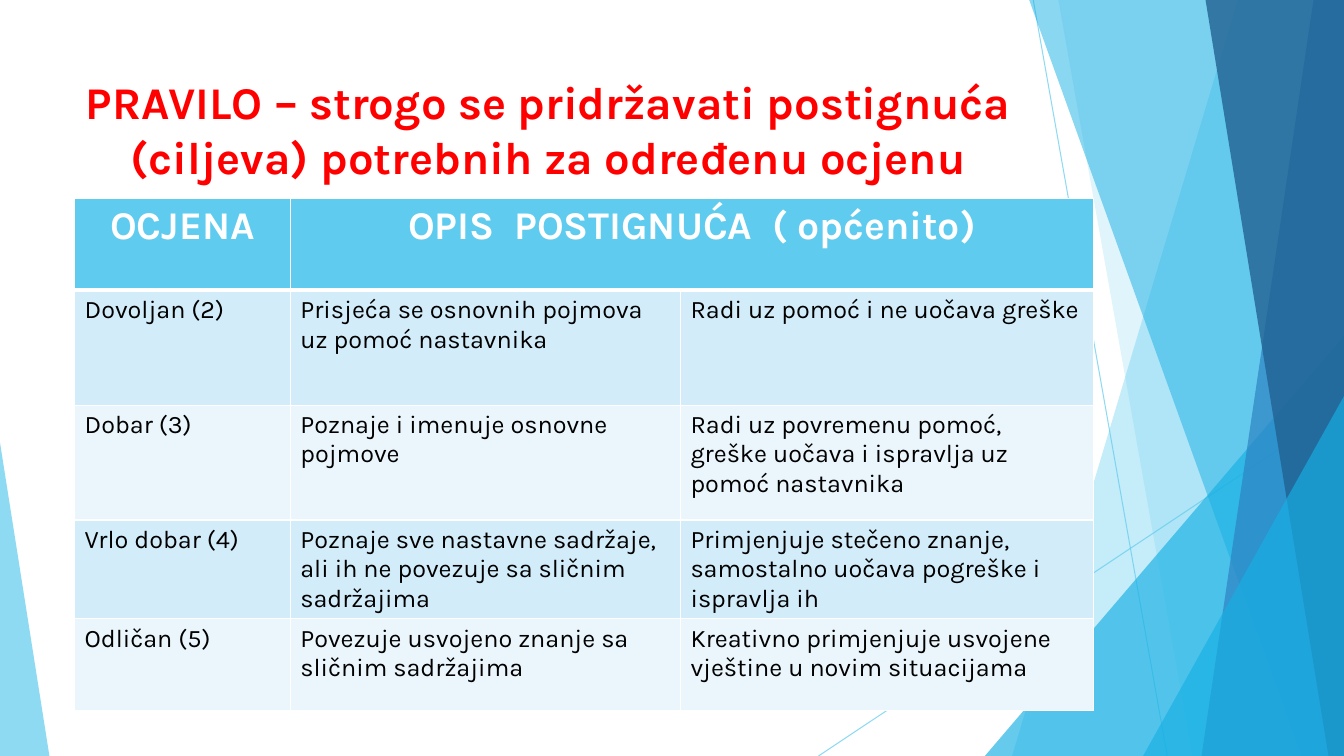
from pptx import Presentation
from pptx.dml.color import RGBColor
from pptx.enum.shapes import MSO_CONNECTOR as CONN, MSO_SHAPE as SHAPE
from pptx.enum.text import MSO_ANCHOR as ANCHOR, MSO_AUTO_SIZE as AUTO, PP_ALIGN as ALIGN
from pptx.oxml.ns import qn
from pptx.oxml.xmlchemy import OxmlElement
from pptx.util import Inches, Pt

SKY, CYAN, BLUE, NAVY = "5FCBEF", "17B0E4", "2E83C3", "226292"
RED, WHITE, BLACK = "FF0000", "FFFFFF", "000000"
BANDS = ["D2ECF9", "EAF6FC"]

COLS = [16.05, 29.03, 30.75]
ROWS = [12.13, 15.2, 15.2, 12.13, 12.13]
HEADER = ["OCJENA", "OPIS  POSTIGNUĆA  ( općenito)"]
GRADES = [
    ["Dovoljan (2)", "Prisjeća se osnovnih pojmova uz pomoć nastavnika",
     "Radi uz pomoć i ne uočava greške"],
    ["Dobar (3)", "Poznaje i imenuje osnovne pojmove",
     "Radi uz povremenu pomoć, greške uočava i ispravlja uz pomoć nastavnika"],
    ["Vrlo dobar (4)", "Poznaje sve nastavne sadržaje, ali ih ne povezuje sa sličnim sadržajima",
     "Primjenjuje stečeno znanje, samostalno uočava pogreške i ispravlja ih"],
    ["Odličan (5)", "Povezuje usvojeno znanje sa sličnim sadržajima",
     "Kreativno primjenjuje usvojene vještine u novim situacijama"],
]


def rgb(value):
    return RGBColor.from_string(value)


def sub(parent, tag, **attrs):
    child = OxmlElement(tag)
    for name, value in attrs.items():
        child.set(name, str(value))
    parent.append(child)
    return child


class Deck:
    font = "Karla"

    def __init__(self):
        self.prs = Presentation()
        self.prs.slide_width, self.prs.slide_height = Inches(13.333), Inches(7.5)
        self.slide = self.prs.slides.add_slide(self.prs.slide_layouts[5])
        self.shapes = self.slide.shapes

    def x(self, percent):
        return round(self.prs.slide_width * percent / 100)

    def y(self, percent):
        return round(self.prs.slide_height * percent / 100)

    def fade(self, s, alpha):
        color = s._element.spPr.find(".//" + qn("a:srgbClr"))
        sub(color, "a:alpha", val=alpha * 1000)

    def paint(self, s, color, alpha):
        s.shadow.inherit = False
        s.fill.solid()
        s.fill.fore_color.rgb = rgb(color)
        s.line.fill.background()
        self.fade(s, alpha)

    def line(self, x1, y1, x2, y2):
        s = self.shapes.add_connector(CONN.STRAIGHT, self.x(x1), self.y(y1), self.x(x2), self.y(y2))
        s.line.color.rgb = rgb(SKY)
        s.line.width = Pt(0.75)
        self.fade(s, 70)
        sub(s._element.spPr, "a:effectLst")

    def ribbon(self, top, bottom, color, alpha):
        form = self.shapes.build_freeform(self.x(top), 0)
        form.add_line_segments([(self.x(px), self.y(py)) for px, py in
                                [(100, 0), (100, 100), (bottom, 100)]])
        self.paint(form.convert_to_shape(), color, alpha)

    def corner(self, left, top, width, peak, color, alpha):
        s = self.shapes.add_shape(SHAPE.ISOSCELES_TRIANGLE, self.x(left), self.y(top),
                                  self.x(width), self.y(100 - top))
        s.adjustments[0] = peak
        self.paint(s, color, alpha)

    def style(self, p, size, color, bold, align):
        p.alignment = align
        p.font.name, p.font.size, p.font.bold = self.font, Pt(size), bold
        p.font.color.rgb = rgb(color)

    def title(self, text, left, top, width, height):
        s = self.shapes.title
        s.left, s.top, s.width, s.height = self.x(left), self.y(top), self.x(width), self.y(height)
        tf = s.text_frame
        tf.text = text
        tf.word_wrap, tf.auto_size, tf.vertical_anchor = True, AUTO.NONE, ANCHOR.BOTTOM
        self.style(tf.paragraphs[0], 32.4, RED, True, ALIGN.CENTER)

    def cell(self, cell, fill, top=1, bottom=1):
        tc_pr = cell._tc.get_or_add_tcPr()
        for side, width in zip("LRTB", [1, 1, top, bottom]):
            edge = sub(tc_pr, "a:ln" + side, w=Pt(width))
            sub(sub(edge, "a:solidFill"), "a:srgbClr", val=WHITE)
        cell.fill.solid()
        cell.fill.fore_color.rgb = rgb(fill)

    def table(self, left, top):
        table = self.shapes.add_table(len(ROWS), len(COLS), self.x(left), self.y(top),
                                      self.x(sum(COLS)), self.y(sum(ROWS))).table
        for column, width in zip(table.columns, COLS):
            column.width = self.x(width)
        for row, height in zip(table.rows, ROWS):
            row.height = self.y(height)
        table.cell(0, 1).merge(table.cell(0, 2))
        for c in range(len(COLS)):
            self.cell(table.cell(0, c), SKY, bottom=3)
        for c, text in enumerate(HEADER):
            table.cell(0, c).text = text
            self.style(table.cell(0, c).text_frame.paragraphs[0], 28, WHITE, True, ALIGN.CENTER)
        for r, grade in enumerate(GRADES, 1):
            for c, text in enumerate(grade):
                cell = table.cell(r, c)
                self.cell(cell, BANDS[(r - 1) % 2], top=3 if r == 1 else 1)
                cell.text = text
                self.style(cell.text_frame.paragraphs[0], 18, BLACK, False, ALIGN.LEFT)


def main():
    deck = Deck()
    deck.line(76.88, 0, 86.85, 100)
    deck.line(100, 53.73, 60.9, 100)
    deck.ribbon(92.1, 75.3, SKY, 36)
    deck.ribbon(78.75, 88.73, SKY, 20)
    deck.corner(73.28, 44.4, 26.72, 1, CYAN, 66)
    deck.ribbon(76.58, 96.83, CYAN, 50)
    deck.ribbon(97.73, 89.4, BLUE, 70)
    deck.ribbon(89.7, 98.85, NAVY, 80)
    deck.corner(85.05, 52.4, 14.95, 1, CYAN, 66)
    deck.corner(0, 58.53, 3.68, 0, SKY, 70)
    deck.title("PRAVILO – strogo se pridržavati postignuća (ciljeva) potrebnih za određenu ocjenu",
               5.55, 8.93, 70.5, 16)
    deck.table(5.55, 26.27)
    deck.prs.save("out.pptx")


if __name__ == "__main__":
    main()
